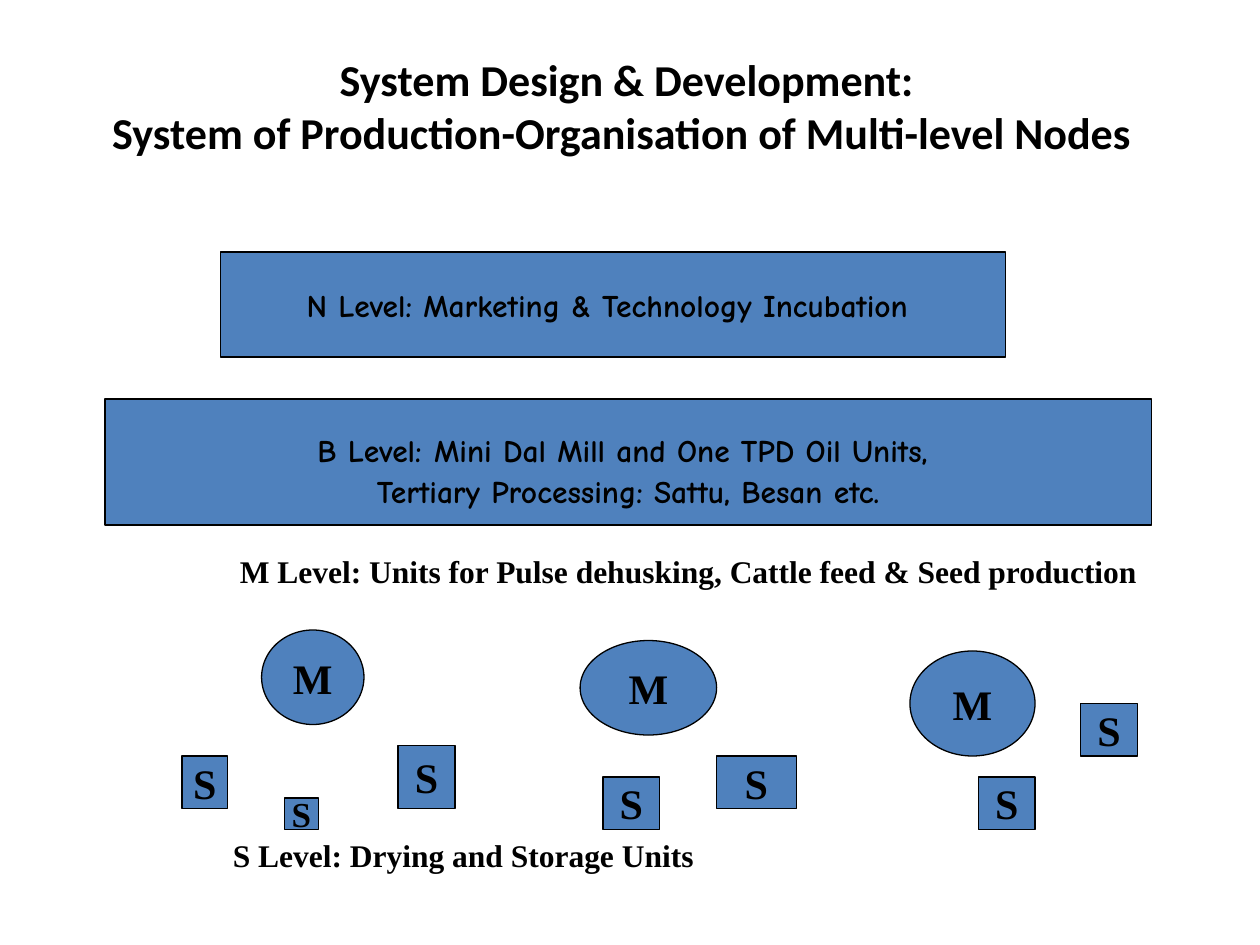
from pptx import Presentation
from pptx.dml.color import RGBColor
from pptx.enum.shapes import MSO_SHAPE
from pptx.enum.text import MSO_ANCHOR, MSO_AUTO_SIZE, PP_ALIGN
from pptx.util import Pt

BLACK = RGBColor(0, 0, 0)
BLUE = RGBColor(0x4F, 0x81, 0xBD)
COMIC = "Comic Neue"
TIMES = "Times New Roman"


def place(sp, box):
    sp.left, sp.top, sp.width, sp.height = [Pt(v) for v in box]


def write(tf, paragraphs, align, **frame):
    """Fill a text frame; each paragraph is a list of (text, font, size) runs."""
    for name, value in frame.items():
        setattr(tf, name, value)
    for i, runs in enumerate(paragraphs):
        p = tf.paragraphs[0] if i == 0 else tf.add_paragraph()
        p.alignment = align
        for text, font, size in runs:
            r = p.add_run()
            r.text = text
            for name, value in {"name": font, "size": Pt(size), "bold": True}.items():
                setattr(r.font, name, value)
            r.font.color.rgb = BLACK


prs = Presentation()
prs.slide_width, prs.slide_height = Pt(720), Pt(540)
s = prs.slides.add_slide(prs.slide_layouts[5])

# Title
title = s.shapes.title
place(title, (55, 21, 612, 78))
title_lines = [
    "System Design & Development: ",
    "System of Production-Organisation of Multi-level Nodes  ",
]
write(title.text_frame, [[(line, "Calibri", 25.2)] for line in title_lines],
      PP_ALIGN.CENTER, vertical_anchor=MSO_ANCHOR.MIDDLE,
      auto_size=MSO_AUTO_SIZE.NONE)

# Level bars, M nodes and S nodes
n_level = [[("N Level: Marketing & Technology Incubation ", COMIC, 18)]]
b_level = [
    [("B Level:", COMIC, 18), (" ", TIMES, 28),
     ("Mini Dal Mill and One TPD Oil Units, ", COMIC, 18)],
    [("Tertiary Processing: Sattu, Besan etc.", COMIC, 18)],
]
m_node = [[("M", TIMES, 24)]]
s_node = [[("S", TIMES, 24)]]
small_s_node = [[("S", TIMES, 20)]]
nodes = [
    (MSO_SHAPE.RECTANGLE, (126, 144, 448.5, 60), n_level),
    (MSO_SHAPE.RECTANGLE, (60, 228, 598, 72), b_level),
    (MSO_SHAPE.OVAL, (149.5, 360, 58.5, 54), m_node),
    (MSO_SHAPE.OVAL, (331.5, 366, 78, 54), m_node),
    (MSO_SHAPE.OVAL, (520, 372, 71.5, 60), m_node),
    (MSO_SHAPE.RECTANGLE, (162.5, 456, 19.5, 18), small_s_node),
    (MSO_SHAPE.RECTANGLE, (104, 432, 26, 30), s_node),
    (MSO_SHAPE.RECTANGLE, (227.5, 426, 32.5, 36), s_node),
    (MSO_SHAPE.RECTANGLE, (344.5, 444, 32.5, 30), s_node),
    (MSO_SHAPE.RECTANGLE, (409.5, 432, 45.5, 30), s_node),
    (MSO_SHAPE.RECTANGLE, (559, 444, 32.5, 30), s_node),
    (MSO_SHAPE.RECTANGLE, (617.5, 402, 32.5, 30), s_node),
]
for kind, box, paragraphs in nodes:
    sp = s.shapes.add_shape(kind, *[Pt(v) for v in box])
    sp.shadow.inherit = False
    sp.fill.solid()
    sp.fill.fore_color.rgb = BLUE
    sp.line.color.rgb = BLACK
    sp.line.width = Pt(0.75)
    write(sp.text_frame, paragraphs, PP_ALIGN.CENTER,
          vertical_anchor=MSO_ANCHOR.MIDDLE, word_wrap=False)

# Level captions
captions = [
    ("M Level: Units for Pulse dehusking, Cattle feed & Seed production",
     (130, 312, 533, 29), False),
    ("S Level: Drying and Storage Units", (126, 474, 354, 29), True),
]
for text, box, wrap in captions:
    sp = s.shapes.add_textbox(*[Pt(v) for v in box])
    write(sp.text_frame, [[(text, TIMES, 18)]], PP_ALIGN.LEFT,
          word_wrap=wrap, auto_size=MSO_AUTO_SIZE.SHAPE_TO_FIT_TEXT)

prs.save("out.pptx")
